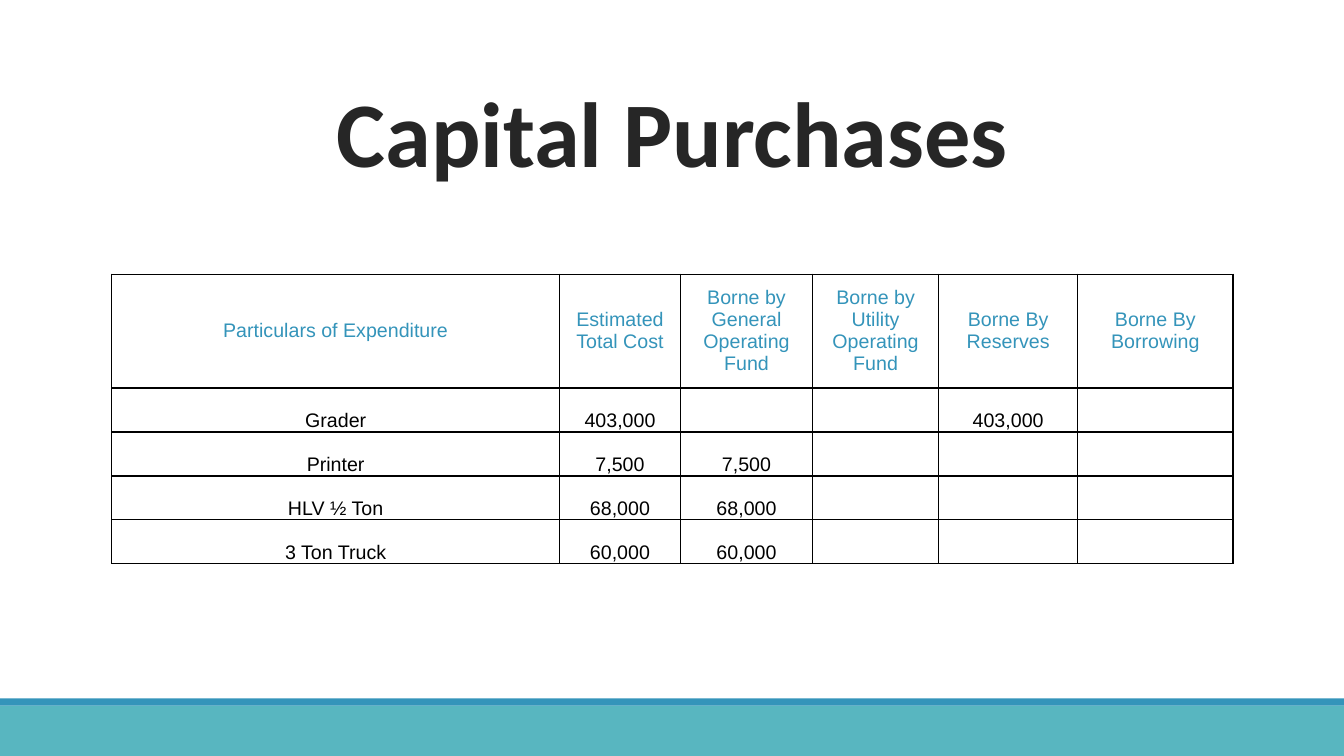
from dataclasses import dataclass

from lxml.etree import SubElement
from pptx import Presentation
from pptx.dml.color import RGBColor
from pptx.enum.shapes import MSO_SHAPE
from pptx.enum.text import MSO_ANCHOR as ANCHOR, PP_ALIGN as ALIGN
from pptx.oxml.ns import qn
from pptx.util import Inches, Pt


@dataclass(frozen=True)
class Theme:
    teal: str = "58B6C0"
    blue: str = "3494BA"
    title_ink: str = "262626"
    ink: str = "000000"
    title_font: str = "Calibri"
    table_font: str = "Arial"
    title_size: float = 66
    table_size: float = 14
    border_width: float = 1


THEME = Theme()

COLUMN_WIDTHS = [4.44, 1.2, 1.31, 1.25, 1.38, 1.54]
HEADER_HEIGHT, ROW_HEIGHT = 1.13, 0.436
PURCHASES = [
    ["Particulars of Expenditure", "Estimated Total Cost",
     "Borne by General Operating Fund", "Borne by Utility Operating Fund",
     "Borne By Reserves", "Borne By Borrowing"],
    ["Grader", "403,000", "", "", "403,000", ""],
    ["Printer", "7,500", "7,500", "", "", ""],
    ["HLV ½ Ton", "68,000", "68,000", "", "", ""],
    ["3 Ton Truck", "60,000", "60,000", "", "", ""],
]


def style_font(font, name, size, color, bold=False):
    font.name, font.size, font.bold = name, Pt(size), bold
    font.color.rgb = RGBColor.from_string(color)


def add_band(slide, top, height, color):
    """Draw a full-width footer band."""
    band = slide.shapes.add_shape(
        MSO_SHAPE.RECTANGLE, 0, Inches(top), Inches(13.33), Inches(height))
    band.shadow.inherit = False
    band.fill.solid()
    band.fill.fore_color.rgb = RGBColor.from_string(color)
    band.line.fill.background()


def set_title(slide, text):
    title = slide.shapes.title
    box = {"left": 1.11, "top": 0.31, "width": 11.12, "height": 1.59}
    for side, length in box.items():
        setattr(title, side, Inches(length))
    frame = title.text_frame
    frame.text = text
    frame.vertical_anchor = ANCHOR.BOTTOM
    paragraph = frame.paragraphs[0]
    paragraph.alignment = ALIGN.CENTER
    paragraph.line_spacing = 0.85
    style_font(paragraph.runs[0].font, THEME.title_font, THEME.title_size,
               THEME.title_ink, bold=True)


def add_borders(cell):
    properties = cell._tc.get_or_add_tcPr()
    for position, side in enumerate(("lnL", "lnR", "lnT", "lnB")):
        border = SubElement(properties, qn(f"a:{side}"),
                            w=str(Pt(THEME.border_width)))
        fill = SubElement(border, qn("a:solidFill"))
        SubElement(fill, qn("a:srgbClr"), val=THEME.ink)
        properties.insert(position, border)


def fill_cell(cell, text, color, anchor):
    cell.text = text
    cell.vertical_anchor = anchor
    for side in ("left", "right", "top", "bottom"):
        setattr(cell, f"margin_{side}", 0)
    paragraph = cell.text_frame.paragraphs[0]
    paragraph.alignment = ALIGN.CENTER
    style_font(paragraph.font, THEME.table_font, THEME.table_size, color)
    for run in paragraph.runs:
        style_font(run.font, THEME.table_font, THEME.table_size, color)
    cell.fill.background()
    add_borders(cell)


def add_purchase_table(slide):
    heights = [HEADER_HEIGHT] + [ROW_HEIGHT] * (len(PURCHASES) - 1)
    table = slide.shapes.add_table(
        len(heights), len(COLUMN_WIDTHS), Inches(1.11), Inches(2.72),
        Inches(sum(COLUMN_WIDTHS)), Inches(sum(heights))).table
    table.horz_banding = False
    table.first_row = False
    for column, width in zip(table.columns, COLUMN_WIDTHS):
        column.width = Inches(width)
    for index, (row, height, texts) in enumerate(
            zip(table.rows, heights, PURCHASES)):
        row.height = Inches(height)
        color, anchor = ((THEME.ink, ANCHOR.BOTTOM) if index
                         else (THEME.blue, ANCHOR.MIDDLE))
        for cell, text in zip(row.cells, texts):
            fill_cell(cell, text, color, anchor)


def main():
    presentation = Presentation()
    presentation.slide_width = Inches(13.33)
    presentation.slide_height = Inches(7.5)
    slide = presentation.slides.add_slide(presentation.slide_layouts[5])
    add_band(slide, 7, 0.5, THEME.teal)
    add_band(slide, 6.93, 0.07, THEME.blue)
    set_title(slide, "Capital Purchases")
    add_purchase_table(slide)
    presentation.save("out.pptx")


if __name__ == "__main__":
    main()
